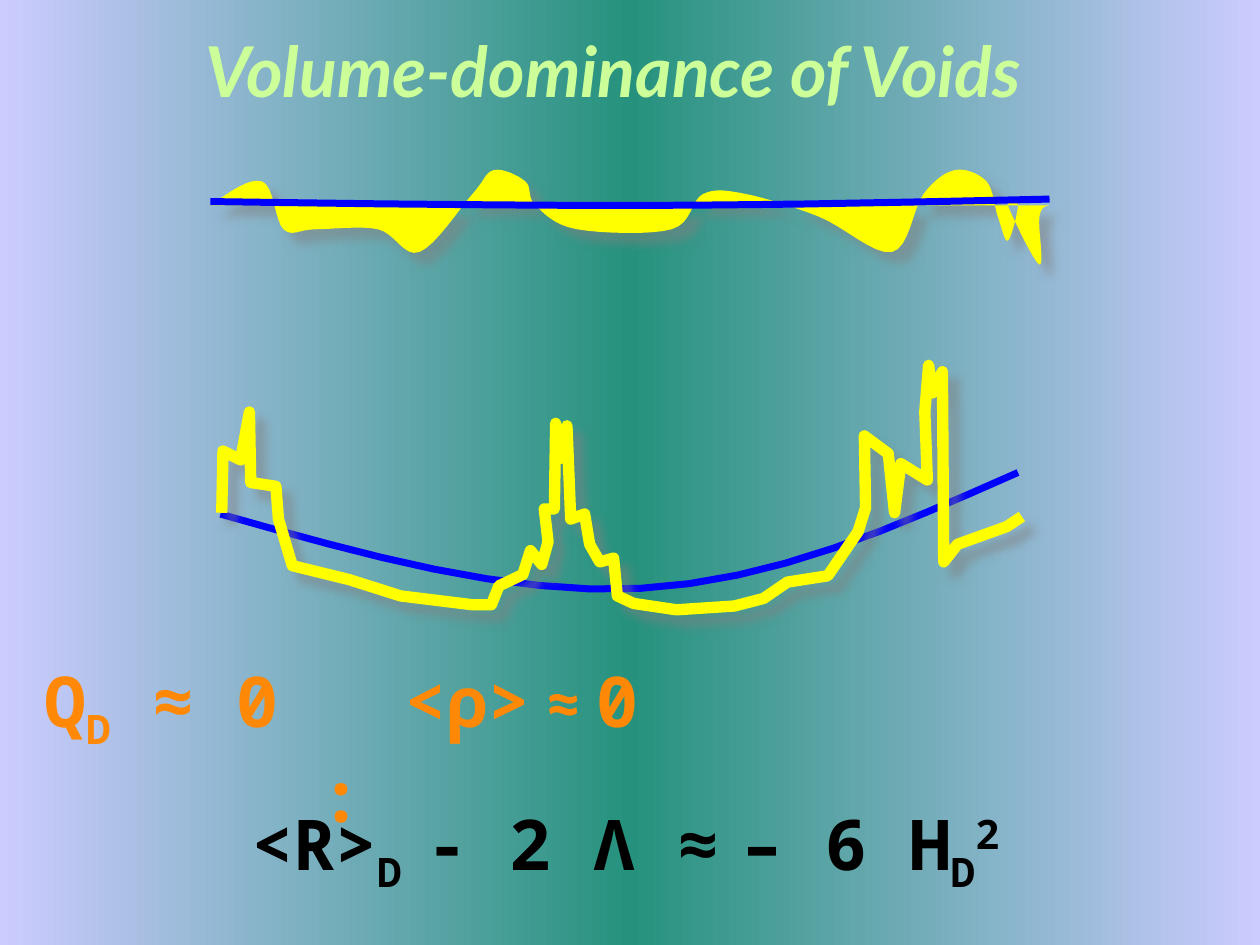
from copy import deepcopy
from lxml.etree import SubElement
from pptx import Presentation
from pptx.dml.color import RGBColor
from pptx.enum.text import MSO_AUTO_SIZE, PP_ALIGN
from pptx.oxml.ns import qn
from pptx.util import Inches, Pt

HUE = {"edge": "CCCCFF", "mid": "26927D", "title": "CCFF99", "note": "FF8907",
       "ink": "000000", "wave": "FFFF00", "mean": "0000FF", "shade": "808080"}
WIDE, HIGH = 10, 7.5
UNIT, FINE, STEPS = 9144, 10, 8
MONO = "Noto Sans Mono"

TEXTS = {
    "title": {"box": (0.145, 0.023, 0.696, 0.103), "wrap": False, "slant": True,
              "runs": [("Volume-dominance of Voids ", "Lato", 40, 0)]},
    "note": {"box": (0.013, 0.689, 0.516, 0.103), "wrap": True, "slant": None,
             "runs": [("Q", MONO, 40, 0), ("D", MONO, 40, -25),
                      (" ≈ 0   <ρ>", MONO, 40, 0), (" ≈ ", "Calibri", 40, 0),
                      ("0 :", MONO, 40, 0)]},
    "ink": {"box": (0.158, 0.833, 0.677, 0.112), "wrap": True, "slant": None,
            "runs": [("<R>", MONO, 40, 0), ("D ", MONO, 40, -25),
                     ("- 2 Λ ≈", MONO, 40, 0), (" ", "Arial", 44, 0),
                     ("– 6 H", MONO, 40, 0), ("D", MONO, 40, -25),
                     ("2", MONO, 40, 30)]},
}

HILLS = [(167, 163), (208, 144), (225, 182), (250, 182), (300, 182), (333, 200),
         (375, 154), (392, 135), (417, 144), (425, 163), (458, 182), (533, 182),
         (558, 154), (592, 154), (650, 172), (708, 200), (733, 154), (758, 135),
         (783, 144), (792, 172), (800, 191), (808, 163), (800, 163), (825, 210),
         (825, 172), (833, 163)]
FLAT = [(167, 160), (518, 163), (833, 158)]
BOWL = [(175, 408), (508, 467), (808, 375)]
PEAKS = [(176, 407), (177, 358), (191, 365), (198, 327), (199, 383), (219, 386),
         (221, 412), (232, 449), (277, 460), (318, 473), (375, 480), (390, 480),
         (396, 465), (415, 456), (421, 437), (430, 448), (435, 430), (432, 404),
         (440, 404), (441, 336), (445, 364), (450, 338), (453, 412), (464, 408),
         (468, 432), (476, 446), (487, 443), (490, 473), (503, 479), (537, 484),
         (583, 481), (606, 475), (625, 462), (657, 457), (681, 422), (687, 403),
         (686, 346), (705, 360), (710, 407), (715, 368), (736, 381), (734, 327),
         (737, 290), (740, 312), (748, 295), (749, 446), (760, 432), (799, 418),
         (811, 410)]


def tint(name):
    return RGBColor.from_string(HUE[name])


def mix(a, b, share):
    return tuple(p + (q - p) * share for p, q in zip(a, b))


def bend(points, share):
    while len(points) > 1:
        points = [mix(a, b, share) for a, b in zip(points, points[1:])]
    return points[0]


def smooth(knots):
    ins, outs = [], []
    for prev, knot, after in zip(knots, knots[1:], knots[2:]):
        pull = [(b - a) / 6 for a, b in zip(prev, after)]
        ins.append(tuple(k - d for k, d in zip(knot, pull)))
        outs.append(tuple(k + d for k, d in zip(knot, pull)))
    outs.insert(0, mix(knots[0], ins[0], 0.5))
    ins.append(mix(knots[-1], outs[-1], 0.5))
    arcs = zip(knots, outs, ins, knots[1:])
    return knots[:1] + [bend(arc, s / STEPS)
                        for arc in arcs for s in range(1, STEPS + 1)]


def trace(slide, dots, fill=None, line=None, width=0, shade=False):
    dots = [(x * FINE, y * FINE) for x, y in dots]
    pen = slide.shapes.build_freeform(*dots[0], scale=UNIT / FINE)
    pen.add_line_segments(dots[1:], close=False)
    shape = pen.convert_to_shape()
    shape.shadow.inherit = False
    if fill:
        shape.fill.solid()
        shape.fill.fore_color.rgb = tint(fill)
    else:
        shape.fill.background()
    if line:
        shape.line.color.rgb = tint(line)
        shape.line.width = Pt(width)
        SubElement(shape._element.spPr.find(qn("a:ln")), qn("a:round"))
    else:
        shape.line.fill.background()
    if shade:
        glow = SubElement(shape._element.spPr.find(qn("a:effectLst")),
                          qn("a:outerShdw"), blurRad=str(Pt(5)),
                          dist=str(Pt(8.5)), dir="2700000", algn="ctr",
                          rotWithShape="0")
        tone = SubElement(glow, qn("a:srgbClr"), val=HUE["shade"])
        SubElement(tone, qn("a:alpha"), val="50000")


def write(slide, name):
    item = TEXTS[name]
    x, y, w, h = item["box"]
    box = slide.shapes.add_textbox(Inches(x * WIDE), Inches(y * HIGH),
                                   Inches(w * WIDE), Inches(h * HIGH))
    frame = box.text_frame
    frame.word_wrap = item["wrap"]
    frame.auto_size = MSO_AUTO_SIZE.SHAPE_TO_FIT_TEXT
    para = frame.paragraphs[0]
    para.alignment = PP_ALIGN.CENTER
    para.font.bold, para.font.italic = True, item["slant"]
    para.font.color.rgb = tint(name)
    for text, face, size, base in item["runs"]:
        run = para.add_run()
        run.text = text
        run.font.name, run.font.size = face, Pt(size)
        if base:
            run._r.get_or_add_rPr().set("baseline", str(base * 1000))


def paint(slide):
    fill = slide.background.fill
    fill.gradient()
    fill.gradient_angle = 0
    stops = slide._element.find(".//" + qn("a:gsLst"))
    stops.insert(1, deepcopy(stops[0]))
    for stop, place, name in zip(fill.gradient_stops, (0, 0.5, 1),
                                 ("edge", "mid", "edge")):
        stop.position = place
        stop.color.rgb = tint(name)


def main():
    deck = Presentation()
    deck.slide_width, deck.slide_height = Inches(WIDE), Inches(HIGH)
    slide = deck.slides.add_slide(deck.slide_layouts[6])
    paint(slide)
    trace(slide, smooth(HILLS), fill="wave", shade=True)
    write(slide, "ink")
    trace(slide, smooth(BOWL), line="mean", width=4)
    trace(slide, PEAKS, line="wave", width=6.5, shade=True)
    write(slide, "note")
    write(slide, "title")
    trace(slide, smooth(FLAT), line="mean", width=4)
    deck.save("out.pptx")


if __name__ == "__main__":
    main()
